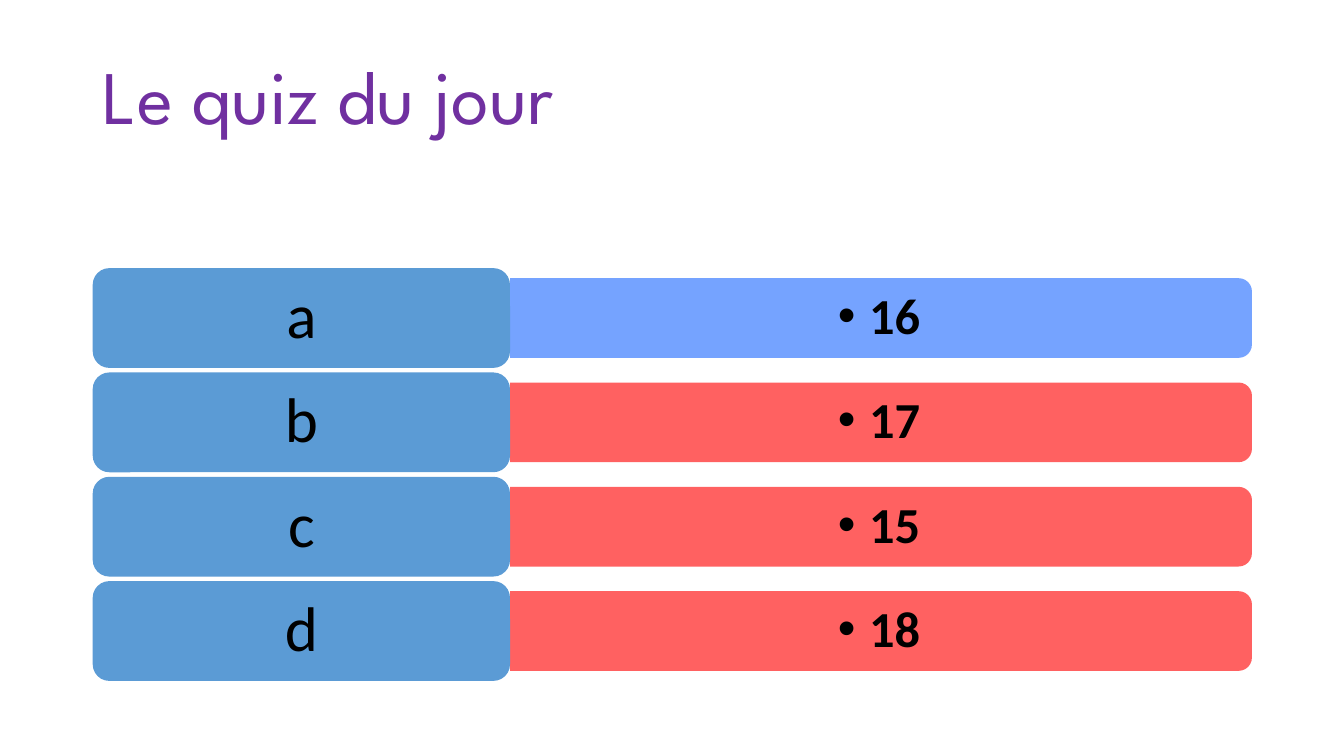
from dataclasses import dataclass

from lxml.etree import SubElement
from pptx import Presentation
from pptx.dml.color import RGBColor
from pptx.enum.shapes import MSO_SHAPE as Preset
from pptx.enum.text import MSO_ANCHOR as Anchor, PP_ALIGN as Align
from pptx.oxml.ns import qn
from pptx.shapes.autoshape import Shape
from pptx.slide import Slide
from pptx.util import Emu, Pt

PX_PER_INCH = 200


@dataclass(frozen=True)
class Theme:
    title_color: str = "7030A0"
    label_fill: str = "5B9BD5"
    right_fill: str = "6699FF"
    wrong_fill: str = "FF5050"
    text_color: str = "000000"
    title_font: str = "League Spartan"
    body_font: str = "Calibri"
    title_size: int = 54
    label_size: int = 45
    answer_size: int = 36
    bar_opacity: int = 90


@dataclass(frozen=True)
class Box:
    left: int
    top: int
    width: int
    height: int


@dataclass(frozen=True)
class Choice:
    letter: str
    answer: str
    is_right: bool = False


THEME = Theme()
TITLE = Box(184, 54, 2300, 290)
FIRST_LABEL = Box(184, 532, 828, 198)
ROW_PITCH = 207
BAR_LENGTH, BAR_THICKNESS = 1472, 158
ANSWER_WIDTH, ANSWER_HEIGHT = 1464, 142
BULLET_INDENT = 62
CHOICES = (
    Choice("a", "16", is_right=True),
    Choice("b", "17"),
    Choice("c", "15"),
    Choice("d", "18"),
)


def px(length: int) -> Emu:
    return Emu(length * 914400 // PX_PER_INCH)


def edges(box: Box) -> tuple[Emu, Emu, Emu, Emu]:
    return px(box.left), px(box.top), px(box.width), px(box.height)


def add_block(page: Slide, preset: Preset, box: Box, color: str) -> Shape:
    block = page.shapes.add_shape(preset, *edges(box))
    block.shadow.inherit = False
    block.fill.solid()
    block.fill.fore_color.rgb = RGBColor.from_string(color)
    block.line.fill.background()
    return block


def write(shape: Shape, text: str, font: str, size: int, color: str,
          align: Align, bold: bool = False) -> None:
    frame = shape.text_frame
    frame.word_wrap = True
    frame.vertical_anchor = Anchor.MIDDLE
    para = frame.paragraphs[0]
    para.alignment = align
    para.line_spacing = 0.9
    span = para.add_run()
    span.text = text
    span.font.name = font
    span.font.size = Pt(size)
    span.font.bold = bold
    span.font.color.rgb = RGBColor.from_string(color)


def add_bullet(shape: Shape) -> None:
    settings = shape.text_frame.paragraphs[0]._p.get_or_add_pPr()
    settings.set("marL", str(px(BULLET_INDENT)))
    settings.set("indent", str(-px(BULLET_INDENT)))
    SubElement(settings, qn("a:buFont")).set("typeface", "Arial")
    SubElement(settings, qn("a:buChar")).set("char", "•")


def add_bar(page: Slide, left: int, middle: int, color: str) -> None:
    # The bar stands upright, then turns a quarter so its round end faces right
    upright = Box(left + (BAR_LENGTH - BAR_THICKNESS) // 2,
                  middle - BAR_LENGTH // 2, BAR_THICKNESS, BAR_LENGTH)
    bar = add_block(page, Preset.ROUND_2_SAME_RECTANGLE, upright, color)
    bar.rotation = 90
    tint = bar.fill._xPr.find(qn("a:solidFill"))[0]
    SubElement(tint, qn("a:alpha")).set("val", str(THEME.bar_opacity * 1000))


def add_choice(page: Slide, row: int, choice: Choice) -> None:
    label_box = Box(FIRST_LABEL.left, FIRST_LABEL.top + row * ROW_PITCH,
                    FIRST_LABEL.width, FIRST_LABEL.height)
    bar_left = label_box.left + label_box.width
    middle = label_box.top + label_box.height // 2

    # Answer bar and its text
    add_bar(page, bar_left, middle,
            THEME.right_fill if choice.is_right else THEME.wrong_fill)
    answer_box = Box(bar_left, middle - ANSWER_HEIGHT // 2,
                     ANSWER_WIDTH, ANSWER_HEIGHT)
    answer = page.shapes.add_textbox(*edges(answer_box))
    write(answer, choice.answer, THEME.body_font, THEME.answer_size,
          THEME.text_color, Align.CENTER, bold=True)
    add_bullet(answer)

    # Letter label
    label = add_block(page, Preset.ROUNDED_RECTANGLE, label_box, THEME.label_fill)
    write(label, choice.letter, THEME.body_font, THEME.label_size,
          THEME.text_color, Align.CENTER)


def main() -> None:
    deck = Presentation()
    deck.slide_width, deck.slide_height = Emu(12192000), px(1500)
    page = deck.slides.add_slide(deck.slide_layouts[6])

    # Title
    title = page.shapes.add_textbox(*edges(TITLE))
    write(title, "Le quiz du jour", THEME.title_font, THEME.title_size,
          THEME.title_color, Align.LEFT)

    # Choices
    for row, choice in enumerate(CHOICES):
        add_choice(page, row, choice)

    deck.save("out.pptx")


if __name__ == "__main__":
    main()
